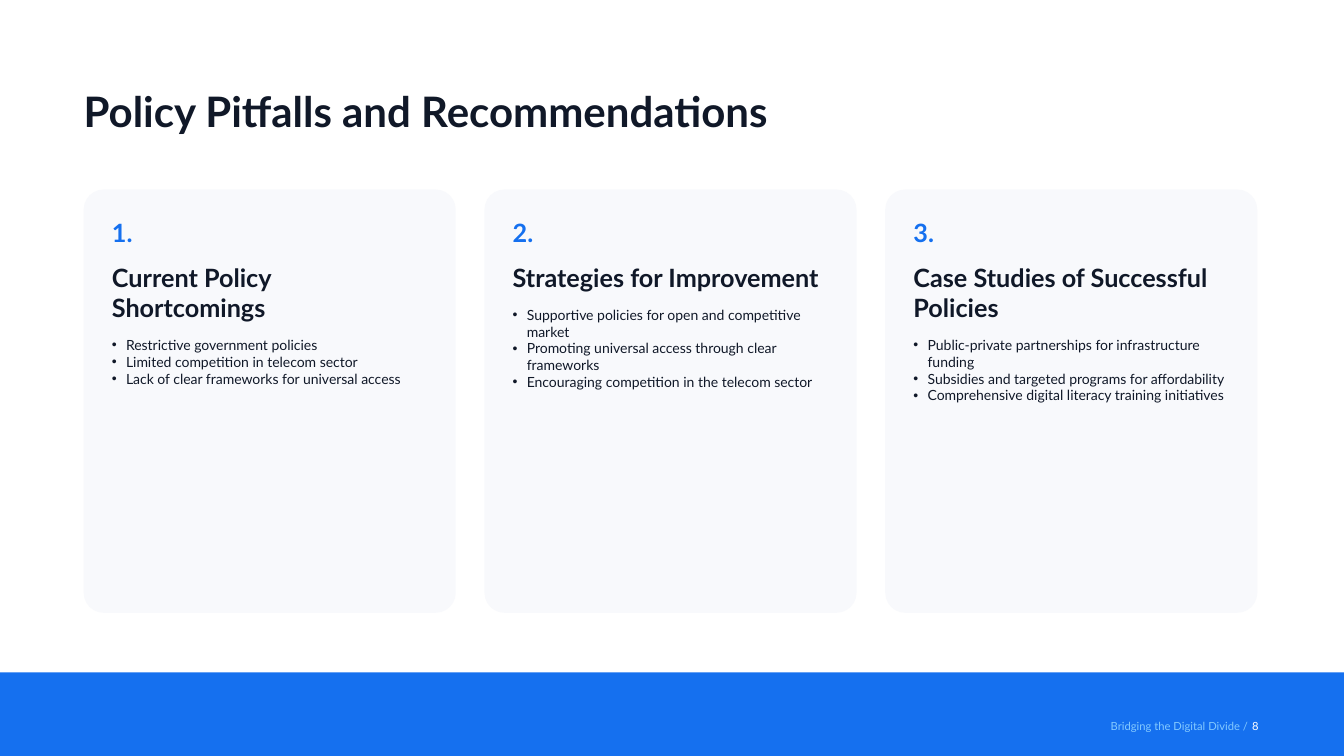
"""Build the policy slide with three numbered cards."""
from lxml import etree
from pptx import Presentation
from pptx import util as u
from pptx.dml.color import RGBColor
from pptx.enum import shapes, text
from pptx.oxml.ns import qn

BLUE = RGBColor(0x15, 0x70, 0xEF)
SKY = RGBColor(0x84, 0xCA, 0xFF)
INK = RGBColor(0x10, 0x18, 0x28)
PALE = RGBColor(0xF8, 0xF9, 0xFC)
WHITE = RGBColor(0xFF, 0xFF, 0xFF)

LEFT, RIGHT, TOP = 0.83, 12.47, 1.88
WIDE, HIGH = 3.69, 4.2
PAD, HANG = 0.28, 0.14

CARDS = [
    ("Current Policy Shortcomings", [
        "Restrictive government policies",
        "Limited competition in telecom sector",
        "Lack of clear frameworks for universal access"]),
    ("Strategies for Improvement", [
        "Supportive policies for open and competitive market",
        "Promoting universal access through clear frameworks",
        "Encouraging competition in the telecom sector"]),
    ("Case Studies of Successful Policies", [
        "Public-private partnerships for infrastructure funding",
        "Subsidies and targeted programs for affordability",
        "Comprehensive digital literacy training initiatives"]),
]


class Deck:
    font = "Lato"

    def __init__(self):
        self.file = Presentation()
        self.file.slide_width = u.Inches(13.33)
        self.file.slide_height = u.Inches(7.5)
        self.slide = self.file.slides.add_slide(self.file.slide_layouts[4])
        self.slide.background.fill.solid()
        self.slide.background.fill.fore_color.rgb = WHITE

    def place(self, item, box):
        item.left, item.top, item.width, item.height = map(u.Inches, box)

    def style(self, para, size, color, bold=False):
        for run in para.runs:
            run.font.name = self.font
            run.font.size = u.Pt(size)
            run.font.bold = bold
            run.font.color.rgb = color

    def panel(self, kind, box, color, round_by=None):
        item = self.slide.shapes.add_shape(kind, *map(u.Inches, box))
        item.shadow.inherit = False
        item.fill.solid()
        item.fill.fore_color.rgb = color
        item.line.fill.background()
        if round_by is not None:
            item.adjustments[0] = round_by

    def title(self, words, box):
        item = self.slide.shapes.title
        self.place(item, box)
        frame = item.text_frame
        frame.text = words
        frame.auto_size = text.MSO_AUTO_SIZE.NONE
        frame.vertical_anchor = text.MSO_ANCHOR.MIDDLE
        frame.paragraphs[0].alignment = text.PP_ALIGN.LEFT
        self.style(frame.paragraphs[0], 30, INK, True)

    def label(self, words, box, color, align):
        item = self.slide.shapes.add_textbox(*map(u.Inches, box))
        frame = item.text_frame
        frame.word_wrap = True
        frame.vertical_anchor = text.MSO_ANCHOR.MIDDLE
        frame.text = words
        frame.paragraphs[0].alignment = align
        self.style(frame.paragraphs[0], 8, color)

    def indent(self, para, hang, bullet):
        props = para._p.get_or_add_pPr()
        props.set("marL", str(u.Inches(hang)))
        props.set("indent", str(-u.Inches(hang)))
        if bullet:
            etree.SubElement(props, qn("a:buChar")).set("char", bullet)
        else:
            etree.SubElement(props, qn("a:buNone"))

    def card(self, item, box, count, head, points):
        self.panel(shapes.MSO_SHAPE.ROUNDED_RECTANGLE, box, PALE, 0.054)
        self.slide.shapes._spTree.append(item._element)
        self.place(item, box)
        frame = item.text_frame
        frame.text = "\n".join([f"{count}.", head, *points])
        frame.auto_size = text.MSO_AUTO_SIZE.NONE
        frame.vertical_anchor = text.MSO_ANCHOR.TOP
        frame.margin_left = frame.margin_right = u.Inches(PAD)
        frame.margin_top = frame.margin_bottom = u.Inches(PAD)
        for row, para in enumerate(frame.paragraphs):
            listed = row > 1
            self.indent(para, HANG if listed else 0, "•" if listed else None)
            para.space_before = u.Pt(10 if row in (1, 2) else 0)
            self.style(para, 10 if listed else 18, INK if row else BLUE,
                       not listed)


def main():
    deck = Deck()
    deck.panel(shapes.MSO_SHAPE.RECTANGLE, (0, 6.67, 13.33, 0.83), BLUE)
    deck.label("Bridging the Digital Divide /", (0.33, 6.91, 12.15, 0.59),
               SKY, text.PP_ALIGN.RIGHT)
    deck.title("Policy Pitfalls and Recommendations", (0.73, 0.6, 12, 1))
    *bodies, spare = list(deck.slide.placeholders)[1:]
    spare._element.getparent().remove(spare._element)
    step = (RIGHT - LEFT - WIDE) / (len(CARDS) - 1)
    for spot, (item, (head, points)) in enumerate(zip(bodies, CARDS)):
        box = (LEFT + spot * step, TOP, WIDE, HIGH)
        deck.card(item, box, spot + 1, head, points)
    deck.label("8", (12.32, 6.91, 0.5, 0.59), WHITE, text.PP_ALIGN.LEFT)
    deck.file.save("out.pptx")


if __name__ == "__main__":
    main()
